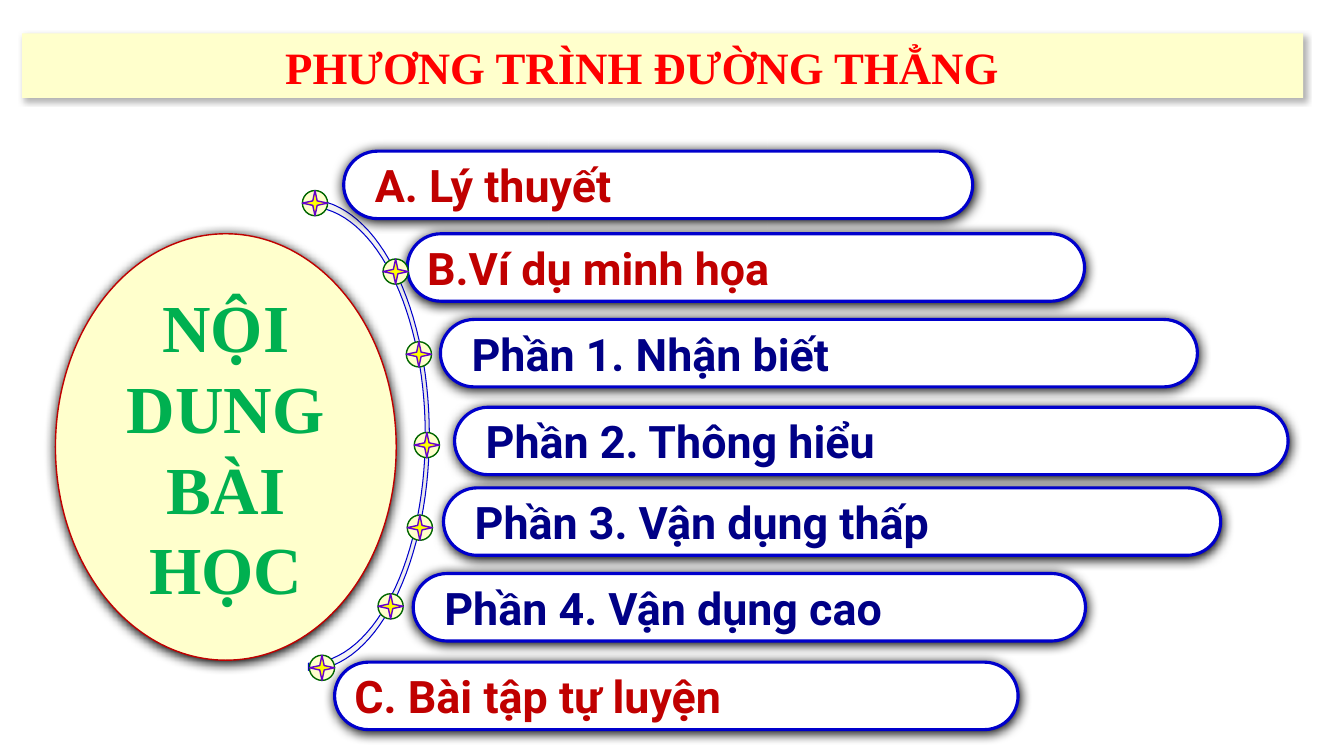
"""Build the lesson outline slide about equations of a line."""
from math import cos, pi, sin

from pptx import Presentation
from pptx.dml.color import RGBColor
from pptx.enum.shapes import MSO_SHAPE as Shape
from pptx.enum.text import MSO_ANCHOR as Anchor, MSO_AUTO_SIZE as AutoSize, PP_ALIGN as Align
from pptx.oxml import parse_xml
from pptx.oxml.ns import nsdecls, qn
from pptx.util import Pt

COLORS = {
    "cream": "FFFFCC", "white": "FFFFFF", "yellow": "FFFF00", "red": "FF0000",
    "dark_red": "C00000", "navy": "000086", "blue": "0000CC", "green": "00B050",
    "dark_green": "006600", "purple": "6600CC", "light_gray": "F4F4F4",
    "gray": "E7E6E6", "black": "000000",
}
TITLE = "PHƯƠNG TRÌNH ĐƯỜNG THẲNG"
TOPIC = "NỘI DUNG BÀI HỌC"
SERIF, SANS = "Times New Roman", "Roboto"

SECTIONS = [
    ("A. Lý thuyết", "dark_red", 8, (245.5, 108, 449.3), (216, 136.1)),
    ("B.Ví dụ minh họa", "dark_red", 0, (290.9, 167, 483.8), (273.6, 185)),
    ("Phần 1. Nhận biết", "navy", 8, (314.6, 228.2, 540.7), (290.2, 244.1)),
    ("Phần 2. Thông hiểu", "navy", 8, (324.7, 290.9, 595.4), (295.9, 308.9)),
    ("Phần 3. Vận dụng thấp", "navy", 8, (316.8, 348.5, 555.1), (290.9, 367.9)),
    ("Phần 4. Vận dụng cao", "navy", 8, (295.2, 409.7, 480.2), (270, 424.1)),
    ("C. Bài tập tự luyện", "dark_red", 0, (239, 473, 488.2), (221, 468)),
]
BAR_HEIGHT, MARKER_SIZE, INSET = 48.2, 18, 7.2
BANNER_BOX = (15.8, 23.8, 915.1, 46.1)
TITLE_BOX = (23.8, 24.5, 869.8, 46.1)
TOPIC_BOX = (39.6, 167, 243.4, 304.6)
ARC_CENTER = (220.3, 310.7)
ARC_OUTER, ARC_INNER = (86.4, 168.1), (83.5, 163.1)
ARC_STEPS = 60
GLOW = (100, 8.5, 1, 90)
BANNER_SHADOW = (30, 4.5, 2.6, 53)


def color(name):
    return RGBColor.from_string(COLORS[name])


def paint_line(shape, name, width):
    shape.line.color.rgb = color(name)
    shape.line.width = Pt(width)


def add_block(shapes, kind, box, fill, line=None, width=1):
    shape = shapes.add_shape(kind, *map(Pt, box))
    shape.shadow.inherit = False
    shape.fill.solid()
    shape.fill.fore_color.rgb = color(fill)
    if line:
        paint_line(shape, line, width)
    else:
        shape.line.fill.background()
    return shape


def add_shadow(shape, opacity, blur, distance, angle):
    effects = shape._element.spPr.find(qn("a:effectLst"))
    effects.append(parse_xml(
        f'<a:outerShdw {nsdecls("a")} blurRad="{Pt(blur)}" dist="{Pt(distance)}" '
        f'dir="{angle * 60000}" algn="ctr" rotWithShape="0">'
        f'<a:srgbClr val="{COLORS["black"]}"><a:alpha val="{opacity * 1000}"/></a:srgbClr>'
        '</a:outerShdw>'))


def write(shape, text, font_name, size, text_color, alignment, indent=0):
    frame = shape.text_frame
    frame.word_wrap = True
    frame.auto_size = AutoSize.NONE
    frame.vertical_anchor = Anchor.MIDDLE
    frame.margin_left = Pt(INSET + indent)
    paragraph = frame.paragraphs[0]
    paragraph.alignment = alignment
    run = paragraph.add_run()
    run.text = text
    run.font.name = font_name
    run.font.size = Pt(size)
    run.font.bold = True
    run.font.color.rgb = color(text_color)


def arc_points(radii):
    angles = [pi * (step / ARC_STEPS - 0.5) for step in range(ARC_STEPS + 1)]
    return [(Pt(ARC_CENTER[0] + radii[0] * cos(angle)),
             Pt(ARC_CENTER[1] + radii[1] * sin(angle))) for angle in angles]


def add_arc(shapes):
    points = arc_points(ARC_INNER) + arc_points(ARC_OUTER)[::-1]
    builder = shapes.build_freeform(*points[0])
    builder.add_line_segments(points[1:], close=True)
    arc = builder.convert_to_shape()
    arc.shadow.inherit = False
    arc.fill.gradient()
    arc.fill.gradient_angle = 90
    stops = arc._element.spPr.find(".//" + qn("a:gsLst"))
    for stop in list(stops):
        stops.remove(stop)
    for position, name in ((0, "light_gray"), (50, "gray"), (100, "light_gray")):
        stops.append(parse_xml(
            f'<a:gs {nsdecls("a")} pos="{position * 1000}">'
            f'<a:srgbClr val="{COLORS[name]}"/></a:gs>'))
    paint_line(arc, "blue", 0.75)


def add_marker(shapes, position):
    group = shapes.add_group_shape()
    box = (*position, MARKER_SIZE, MARKER_SIZE)
    add_block(group.shapes, Shape.OVAL, box, "cream", "dark_green")
    add_block(group.shapes, Shape.STAR_4_POINT, box, "yellow", "purple")


def add_title(slide):
    title = slide.shapes.title
    title.left, title.top, title.width, title.height = map(Pt, TITLE_BOX)
    write(title, TITLE, SERIF, 32, "red", Align.CENTER)
    slide.shapes._spTree.append(title._element)


def main():
    presentation = Presentation()
    presentation.slide_width, presentation.slide_height = Pt(960), Pt(540)
    slide = presentation.slides.add_slide(presentation.slide_layouts[5])
    shapes = slide.shapes

    banner = add_block(shapes, Shape.RECTANGLE, BANNER_BOX, "cream")
    add_shadow(banner, *BANNER_SHADOW)
    add_arc(shapes)

    for text, text_color, indent, (left, top, width), _ in SECTIONS:
        bar = add_block(shapes, Shape.ROUNDED_RECTANGLE, (left, top, width, BAR_HEIGHT),
                        "white", "blue", 2.25)
        bar.adjustments[0] = 0.5
        add_shadow(bar, *GLOW)
        write(bar, text, SANS, 32, text_color, Align.LEFT, indent)

    topic = add_block(shapes, Shape.OVAL, TOPIC_BOX, "cream", "dark_red")
    add_shadow(topic, *GLOW)
    write(topic, TOPIC, SERIF, 48, "green", Align.CENTER)

    for *_, marker in SECTIONS:
        add_marker(shapes, marker)
    add_title(slide)
    presentation.save("out.pptx")


if __name__ == "__main__":
    main()
